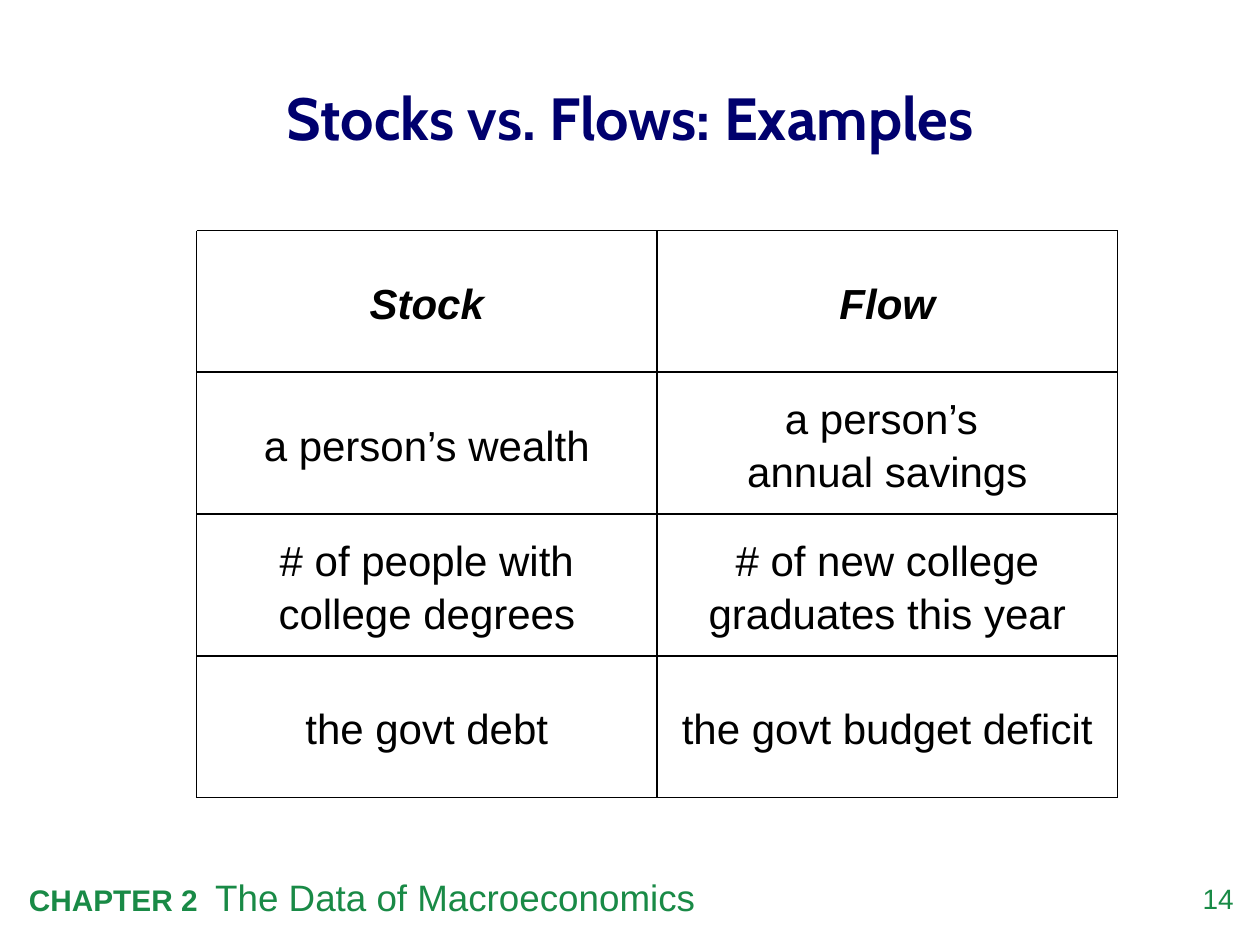
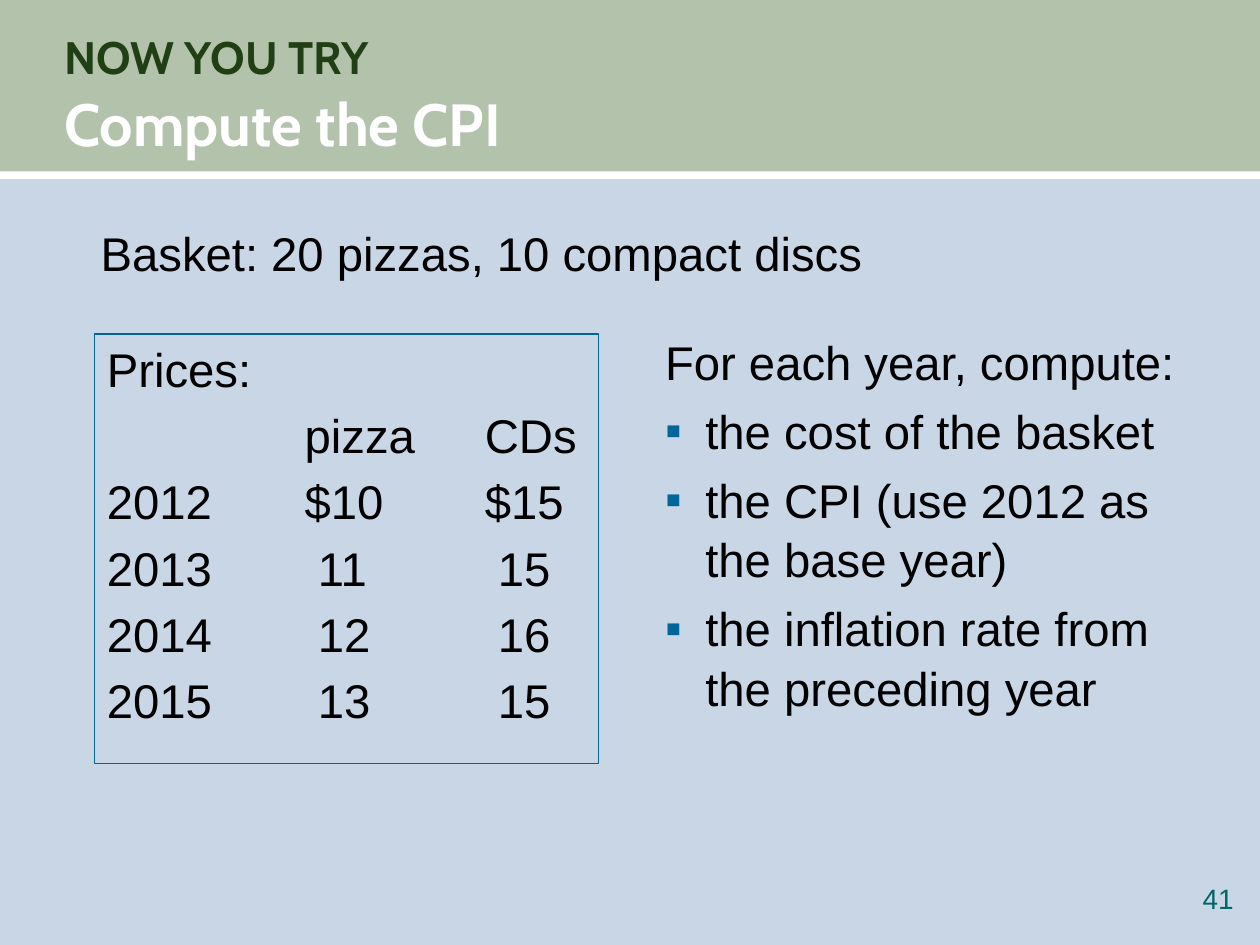
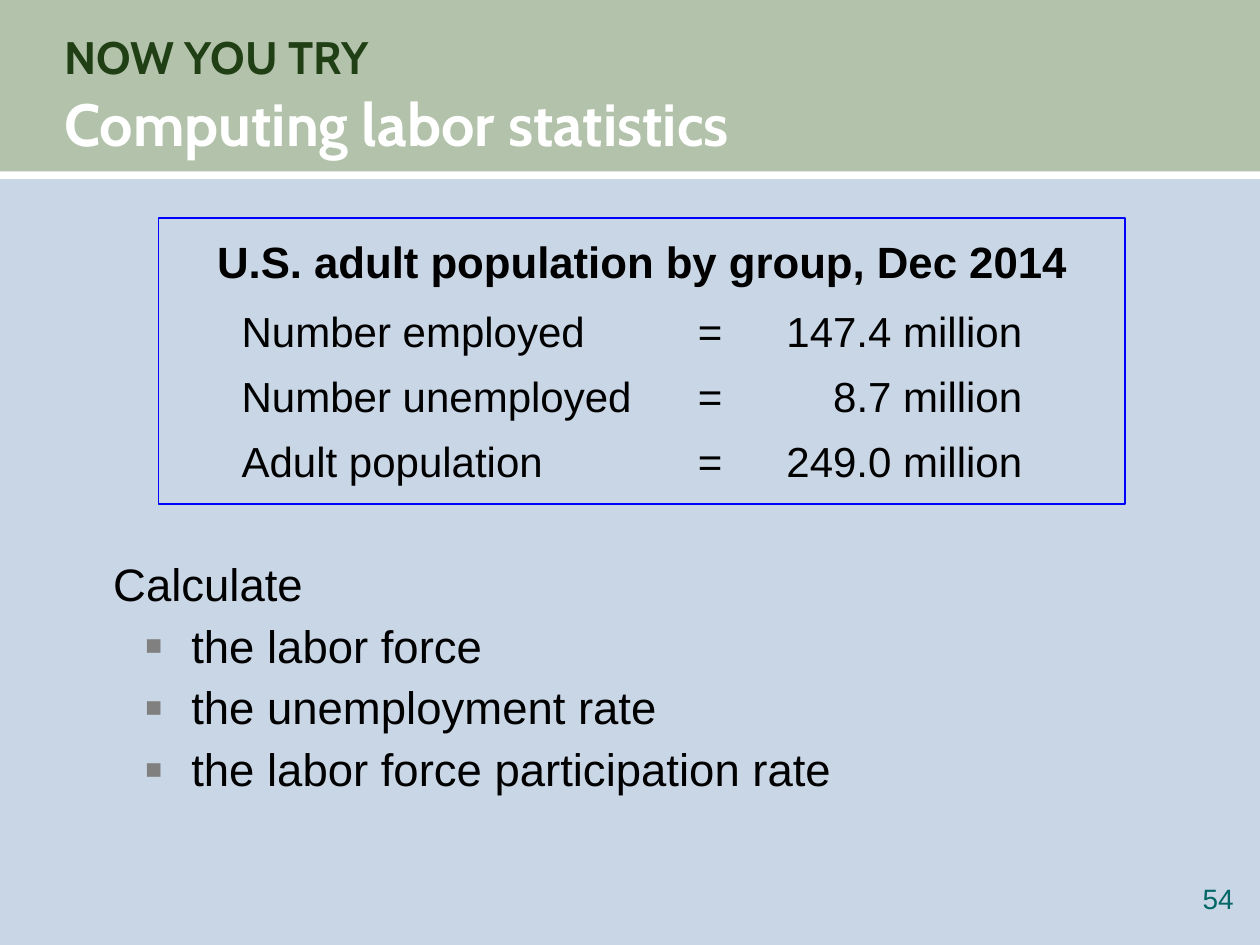
from dataclasses import dataclass, replace

from lxml import etree
from pptx import Presentation
from pptx.dml.color import RGBColor
from pptx.enum.shapes import MSO_CONNECTOR, MSO_SHAPE
from pptx.enum.text import MSO_ANCHOR, PP_ALIGN
from pptx.oxml.ns import qn
from pptx.util import Inches, Pt

RECTANGLE = MSO_SHAPE.RECTANGLE
STRAIGHT = MSO_CONNECTOR.STRAIGHT
TOP, MIDDLE = MSO_ANCHOR.TOP, MSO_ANCHOR.MIDDLE
LEFT, CENTER, RIGHT = PP_ALIGN.LEFT, PP_ALIGN.CENTER, PP_ALIGN.RIGHT


@dataclass(frozen=True)
class Theme:
    body_font: str = "Arial"
    title_font: str = "Cabin"
    white: str = "FFFFFF"
    black: str = "000000"
    navy: str = "00006E"
    footer_green: str = "198A46"
    exercise_ground: str = "C9D6E5"
    band: str = "B3C2AA"
    kicker: str = "203F15"
    teal: str = "006666"
    steel: str = "006699"
    blue: str = "0000FF"
    gray: str = "808080"
    title_size: int = 34
    kicker_size: int = 26
    price_size: int = 27
    task_size: int = 26
    heading_size: int = 25
    table_size: int = 24
    chapter_name_size: int = 21
    chapter_size: int = 17
    number_size: int = 16
    loose: float = 1.05
    table_spacing: float = 1.14


THEME = Theme()


@dataclass(frozen=True)
class Box:
    left: float
    top: float
    width: float
    height: float

    def lengths(self) -> tuple:
        return tuple(Inches(n) for n in (self.left, self.top, self.width, self.height))


@dataclass(frozen=True)
class Bullet:
    color: str
    percent: int = 100


@dataclass(frozen=True)
class Style:
    size: float
    color: str = THEME.black
    font: str = THEME.body_font
    bold: bool = False
    italic: bool = False
    align: PP_ALIGN = LEFT
    spacing: float = 1.0
    before: float = 0
    tabs: tuple = ()
    hanging: tuple = ()
    bullet: Bullet | None = None


@dataclass(frozen=True)
class Line:
    text: str
    style: Style


NUMBER_BOX = Box(9.24, 7, 0.55, 0.32)
FOOTER_BOX = Box(0.13, 6.89, 8.18, 0.45)
BAND_BOX = Box(0, -0.01, 10, 1.41)
RULE_BOX = Box(0, 1.36, 10, 0.06)
EXERCISE_TITLE_BOX = Box(0.51, 0.22, 9.02, 1.03)

TITLE = Style(THEME.title_size, THEME.navy, THEME.title_font, bold=True,
              align=CENTER, spacing=THEME.loose)
EXERCISE_TITLE = replace(TITLE, color=THEME.white, align=LEFT)
KICKER = replace(EXERCISE_TITLE, size=THEME.kicker_size, color=THEME.kicker)
CHAPTER = Style(THEME.chapter_size, THEME.footer_green, bold=True, tabs=((1.48, "l"),))
CHAPTER_NAME = replace(CHAPTER, size=THEME.chapter_name_size, bold=False)
EXAMPLE = Style(THEME.table_size, align=CENTER, spacing=THEME.table_spacing)
EXAMPLE_HEADING = replace(EXAMPLE, bold=True, italic=True)
BASKET = Style(THEME.price_size, spacing=THEME.loose)
PRICE = Style(THEME.price_size, before=5.4, tabs=((1.57, "l"), (3, "l")))
YEAR_TASK = Style(THEME.price_size, spacing=THEME.loose, before=5.4, hanging=(0.32, -0.32))
YEAR_BULLET = replace(YEAR_TASK, bullet=Bullet(THEME.steel))
GROUP = Style(THEME.table_size, spacing=1.2, before=2.4,
              tabs=((0.56, "l"), (4.18, "l"), (5.44, "dec")))
GROUP_HEADING = Style(THEME.heading_size, bold=True, align=CENTER, spacing=1.2)
LABOR_TASK = Style(THEME.task_size, spacing=THEME.loose, before=2.6)
LABOR_BULLET = replace(LABOR_TASK, hanging=(0.62, -0.37), bullet=Bullet(THEME.gray, 120))

EXAMPLES = (
    ("Stock", "Flow"),
    ("a person’s wealth", "a person’s \vannual savings"),
    ("# of people with college degrees", "# of new college graduates this year"),
    ("the govt debt", "the govt budget deficit"),
)
PRICES = (
    ("Prices:",),
    ("", "pizza", "CDs"),
    ("2012", "$10", "$15"),
    ("2013", " 11", " 15"),
    ("2014", " 12", " 16"),
    ("2015", " 13", " 15"),
)
YEAR_TASKS = (
    "the cost of the basket",
    "the CPI (use 2012 as the base year)",
    "the inflation rate from the preceding year",
)
GROUPS = (
    ("Number employed", "147.4 million"),
    ("Number unemployed", "8.7 million"),
    ("Adult population", "249.0 million"),
)
LABOR_TASKS = (
    "the labor force",
    "the unemployment rate",
    "the labor force participation rate",
)


def rgb(color: str) -> RGBColor:
    return RGBColor.from_string(color)


def format_run(run, style: Style) -> None:
    font = run.font
    font.name, font.size = style.font, Pt(style.size)
    font.bold, font.italic = style.bold, style.italic
    font.color.rgb = rgb(style.color)


def format_paragraph(paragraph, style: Style) -> None:
    paragraph.alignment = style.align
    paragraph.line_spacing = style.spacing
    paragraph.space_before = Pt(style.before)
    for run in paragraph.runs:
        format_run(run, style)
    properties = paragraph._p.get_or_add_pPr()
    if style.hanging:
        margin, indent = style.hanging
        properties.set("marL", str(Inches(margin)))
        properties.set("indent", str(Inches(indent)))
    if style.bullet:
        bullet_color = etree.SubElement(properties, qn("a:buClr"))
        etree.SubElement(bullet_color, qn("a:srgbClr"), val=style.bullet.color)
        etree.SubElement(properties, qn("a:buSzPct"), val=str(style.bullet.percent * 1000))
        etree.SubElement(properties, qn("a:buFont"), typeface=THEME.body_font)
        etree.SubElement(properties, qn("a:buChar"), char="▪")
    if style.tabs:
        stops = etree.SubElement(properties, qn("a:tabLst"))
        for position, kind in style.tabs:
            etree.SubElement(stops, qn("a:tab"), pos=str(Inches(position)), algn=kind)


def write(frame, lines: list[Line], anchor: MSO_ANCHOR = TOP, inset: bool = True) -> None:
    frame.word_wrap = True
    frame.vertical_anchor = anchor
    if not inset:
        frame.margin_left = frame.margin_right = 0
        frame.margin_top = frame.margin_bottom = 0
    frame.text = "\n".join(line.text for line in lines)
    for paragraph, line in zip(frame.paragraphs, lines):
        format_paragraph(paragraph, line.style)


def add_text(slide, box: Box, lines: list[Line], anchor: MSO_ANCHOR = TOP, inset: bool = True):
    frame = slide.shapes.add_textbox(*box.lengths()).text_frame
    write(frame, lines, anchor, inset)
    return frame


def add_block(slide, box: Box, color: str) -> None:
    block = slide.shapes.add_shape(RECTANGLE, *box.lengths())
    block.shadow.inherit = False
    block.fill.solid()
    block.fill.fore_color.rgb = rgb(color)
    block.line.fill.background()


def add_framed_text(slide, box: Box, border: str, lines: list[Line]) -> None:
    panel = slide.shapes.add_shape(RECTANGLE, *box.lengths())
    panel.shadow.inherit = False
    panel.fill.background()
    panel.line.color.rgb = rgb(border)
    panel.line.width = Pt(0.7)
    write(panel.text_frame, lines)


def add_slide(deck, ground: str, number: int, number_color: str):
    slide = deck.slides.add_slide(deck.slide_layouts[6])
    slide.background.fill.solid()
    slide.background.fill.fore_color.rgb = rgb(ground)
    number_style = Style(THEME.number_size, number_color, align=RIGHT)
    add_text(slide, NUMBER_BOX, [Line(str(number), number_style)], inset=False)
    return slide


def add_exercise_slide(deck, title: str, number: int):
    slide = add_slide(deck, THEME.exercise_ground, number, THEME.teal)
    add_block(slide, BAND_BOX, THEME.band)
    heading = add_text(slide, EXERCISE_TITLE_BOX,
                       [Line(f"NOW YOU TRY\v{title}", EXERCISE_TITLE)], MIDDLE, inset=False)
    format_run(heading.paragraphs[0].runs[0], KICKER)
    add_block(slide, RULE_BOX, THEME.white)
    return slide


def add_grid_line(slide, left: float, top: float, right: float, bottom: float) -> None:
    ends = (Inches(n) for n in (left, top, right, bottom))
    grid_line = slide.shapes.add_connector(STRAIGHT, *ends)
    grid_line.line.color.rgb = rgb(THEME.black)
    grid_line.line.width = Pt(1)
    etree.SubElement(grid_line._element.spPr, qn("a:effectLst"))


def add_examples_table(slide, box: Box) -> None:
    row_count, column_count = len(EXAMPLES), len(EXAMPLES[0])
    table = slide.shapes.add_table(row_count, column_count, *box.lengths()).table
    table.first_row = table.horz_banding = False
    for row_index, row in enumerate(EXAMPLES):
        style = EXAMPLE if row_index else EXAMPLE_HEADING
        for column_index, text in enumerate(row):
            cell = table.cell(row_index, column_index)
            cell.vertical_anchor = MIDDLE
            cell.text_frame.text = text
            format_paragraph(cell.text_frame.paragraphs[0], style)
            cell.fill.background()
    right, bottom = box.left + box.width, box.top + box.height
    for row_index in range(row_count + 1):
        level = box.top + row_index * box.height / row_count
        add_grid_line(slide, box.left, level, right, level)
    for column_index in range(column_count + 1):
        edge = box.left + column_index * box.width / column_count
        add_grid_line(slide, edge, box.top, edge, bottom)


def build_stocks_and_flows(deck) -> None:
    slide = add_slide(deck, THEME.white, 14, THEME.footer_green)
    footer = add_text(slide, FOOTER_BOX, [Line("CHAPTER 2\t", CHAPTER)])
    chapter_name = footer.paragraphs[0].add_run()
    chapter_name.text = "The Data of Macroeconomics"
    format_run(chapter_name, CHAPTER_NAME)
    add_text(slide, Box(0, 0.26, 10, 1.31), [Line("Stocks vs. Flows: Examples", TITLE)],
             MIDDLE, inset=False)
    add_examples_table(slide, Box(1.56, 1.83, 7.31, 4.5))


def build_cpi_exercise(deck) -> None:
    slide = add_exercise_slide(deck, "Compute the CPI", 41)
    add_text(slide, Box(0.7, 1.71, 8.72, 0.64),
             [Line("Basket: 20 pizzas, 10 compact discs", BASKET)])
    add_framed_text(slide, Box(0.75, 2.65, 4, 3.41), THEME.steel,
                    [Line("\t".join(row), PRICE) for row in PRICES])
    add_text(slide, Box(5.18, 2.57, 4.5, 4.17),
             [Line("For each year, compute:", YEAR_TASK)]
             + [Line(task, YEAR_BULLET) for task in YEAR_TASKS])


def build_labor_exercise(deck) -> None:
    slide = add_exercise_slide(deck, "Computing labor statistics", 54)
    group_lines = [Line(f"\t{group} \t= \t{count}", GROUP) for group, count in GROUPS]
    group_lines[0] = replace(group_lines[0], style=replace(GROUP, before=5))
    add_framed_text(slide, Box(1.26, 1.73, 7.67, 2.27), THEME.blue,
                    [Line("U.S. adult population by group, Dec 2014", GROUP_HEADING)]
                    + group_lines)
    add_text(slide, Box(0.8, 4.34, 8.45, 2.65),
             [Line("Calculate", LABOR_TASK)]
             + [Line(task, LABOR_BULLET) for task in LABOR_TASKS])


def main() -> None:
    deck = Presentation()
    deck.slide_width, deck.slide_height = Inches(10), Inches(7.5)
    build_stocks_and_flows(deck)
    build_cpi_exercise(deck)
    build_labor_exercise(deck)
    deck.save("out.pptx")


if __name__ == "__main__":
    main()
